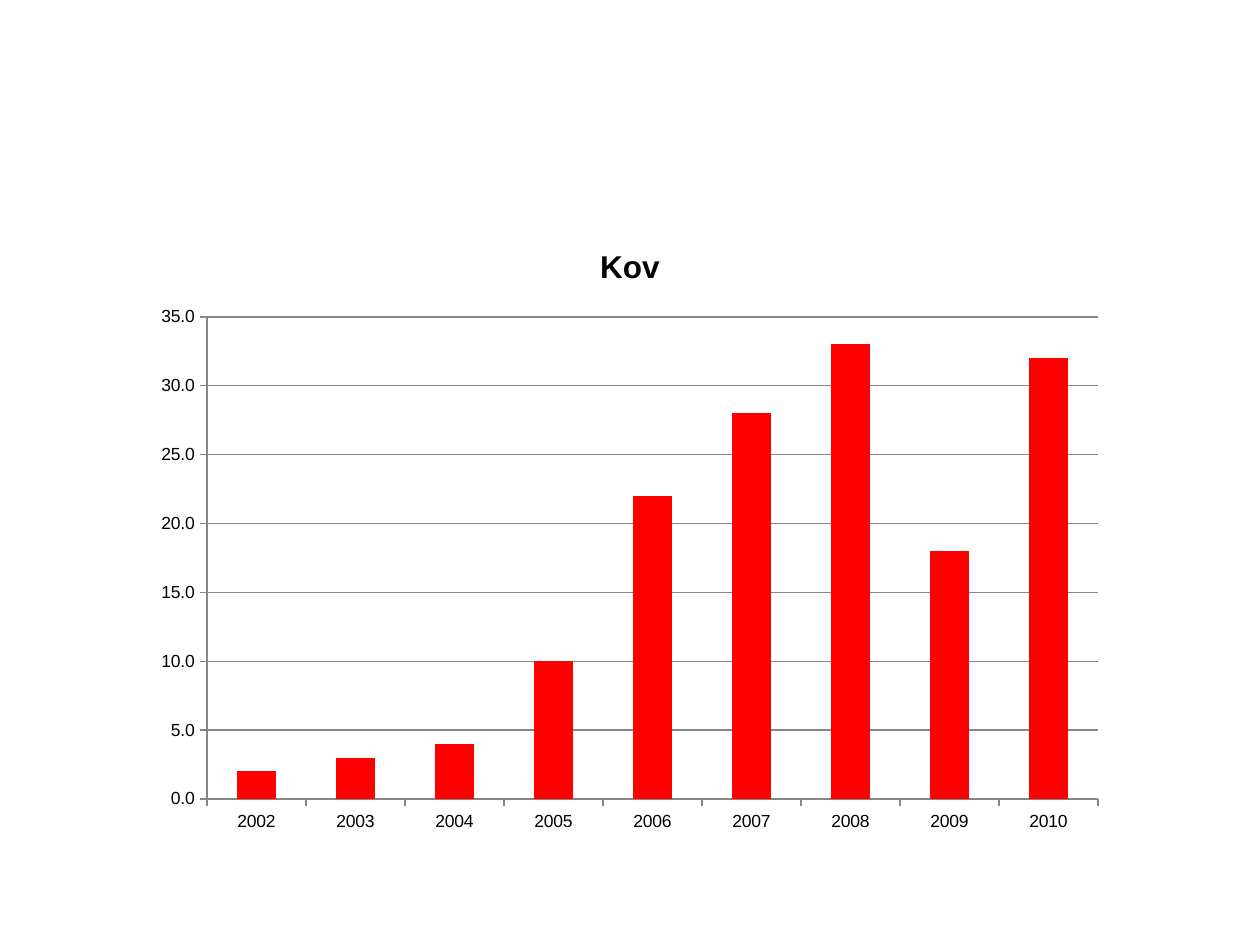
"""Build a slide with one column chart of yearly values."""
from dataclasses import dataclass

from pptx import Presentation
from pptx import util as u
from pptx.chart.axis import _BaseAxis as Axis
from pptx.chart.chart import Chart
from pptx.chart.data import CategoryChartData
from pptx.dml.color import RGBColor
from pptx.enum import chart as ch
from pptx.oxml import parse_xml
from pptx.oxml.ns import nsdecls

SCALE = 914400 / 126


@dataclass(frozen=True)
class Theme:
    font: str = "Arial"
    ink: RGBColor = RGBColor(0, 0, 0)
    bar: RGBColor = RGBColor(255, 0, 0)
    rule: RGBColor = RGBColor(0x86, 0x86, 0x86)
    label: int = 10
    title: int = 18


@dataclass(frozen=True)
class Box:
    left: int
    top: int
    width: int
    height: int

    def emu(self) -> list[u.Emu]:
        return [px(n) for n in (self.left, self.top, self.width, self.height)]


THEME = Theme()
FRAME = Box(142, 221, 976, 622)
PLOT = Box(207, 317, 891, 482)
NAME = "Kov"
YEARS = range(2002, 2011)
VALUES = (2, 3, 4, 10, 22, 28, 33, 18, 32)


def px(n: int) -> u.Emu:
    return u.Emu(round(n * SCALE))


def set_font(font, size: int, bold: bool) -> None:
    font.name, font.size, font.bold = THEME.font, u.Pt(size), bold
    font.color.rgb = THEME.ink


def style_axis(axis: Axis) -> None:
    axis.major_tick_mark = ch.XL_TICK_MARK.OUTSIDE
    axis.minor_tick_mark = ch.XL_TICK_MARK.NONE
    axis.format.line.color.rgb = THEME.rule
    set_font(axis.tick_labels.font, THEME.label, False)


def place_plot(chart: Chart) -> None:
    area = chart._chartSpace.chart.plotArea
    for old in area.xpath("c:layout"):
        area.remove(old)
    parts = {
        "x": (PLOT.left - FRAME.left) / FRAME.width,
        "y": (PLOT.top - FRAME.top) / FRAME.height,
        "w": PLOT.width / FRAME.width,
        "h": PLOT.height / FRAME.height,
    }
    modes = '<c:xMode val="edge"/><c:yMode val="edge"/>'
    sizes = "".join(f'<c:{key} val="{part:.4f}"/>' for key, part in parts.items())
    area.insert(0, parse_xml(
        f'<c:layout {nsdecls("c")}><c:manualLayout><c:layoutTarget val="inner"/>'
        f"{modes}{sizes}</c:manualLayout></c:layout>"
    ))


def add_bars(slide) -> None:
    data = CategoryChartData(number_format="0.0")
    data.categories = [str(year) for year in YEARS]
    data.add_series(NAME, VALUES)
    kind = ch.XL_CHART_TYPE.COLUMN_CLUSTERED
    chart = slide.shapes.add_chart(kind, *FRAME.emu(), data).chart
    set_font(chart.font, THEME.label, False)
    chart.has_legend = False
    chart.has_title = True
    frame = chart.chart_title.text_frame
    frame.text = NAME
    set_font(frame.paragraphs[0].runs[0].font, THEME.title, True)
    chart.chart_title.include_in_layout = False

    plot = chart.plots[0]
    plot.gap_width, plot.vary_by_categories = 150, False
    fill = plot.series[0].format.fill
    fill.solid()
    fill.fore_color.rgb = THEME.bar

    for axis in (chart.category_axis, chart.value_axis):
        style_axis(axis)
    scale = chart.value_axis
    scale.minimum_scale, scale.maximum_scale, scale.major_unit = 0, 35, 5
    scale.has_major_gridlines = True
    scale.major_gridlines.format.line.color.rgb = THEME.rule
    scale.tick_labels.number_format = "0.0"
    scale.tick_labels.number_format_is_linked = False
    place_plot(chart)


def main() -> None:
    deck = Presentation()
    deck.slide_width, deck.slide_height = px(1260), px(945)
    add_bars(deck.slides.add_slide(deck.slide_layouts[6]))
    deck.save("out.pptx")


if __name__ == "__main__":
    main()
